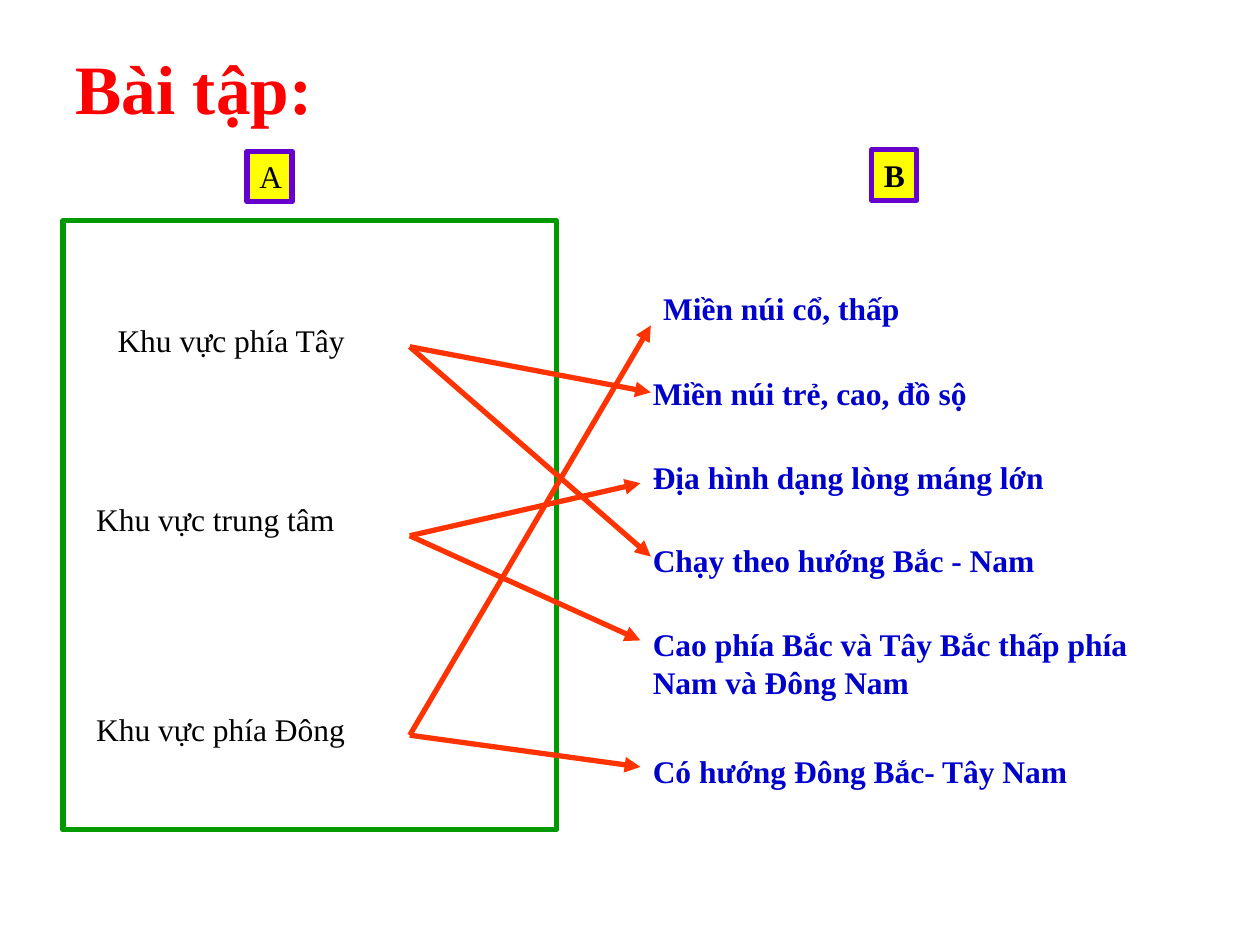
from pptx import Presentation
from pptx.dml.color import RGBColor
from pptx.enum.shapes import MSO_CONNECTOR, MSO_SHAPE
from pptx.enum.text import MSO_ANCHOR, MSO_AUTO_SIZE, PP_ALIGN
from pptx.oxml.ns import qn
from pptx.util import Cm, Pt
from lxml import etree

RECT = MSO_SHAPE.RECTANGLE
LINE = MSO_CONNECTOR.STRAIGHT
LEFT = PP_ALIGN.LEFT
MIDDLE = MSO_ANCHOR.MIDDLE
TOP = MSO_ANCHOR.TOP
GROW = MSO_AUTO_SIZE.SHAPE_TO_FIT_TEXT
FIXED = MSO_AUTO_SIZE.NONE


def color(code):
    return RGBColor.from_string(code)


class Board:
    face = "Times New Roman"
    size = 18
    black = "000000"
    red = "FF0000"
    blue = "0000CC"
    green = "009900"
    purple = "6600CC"
    yellow = "FFFF00"
    orange = "FF3300"
    weight = Pt(3)

    def __init__(self, slide):
        self.slide = slide

    def letter(self, frame, text, ink, bold=False, size=size):
        frame.text = text
        para = frame.paragraphs[0]
        para.alignment = LEFT
        font = para.font
        font.name = self.face
        font.size = Pt(size)
        font.bold = bold
        font.color.rgb = color(ink)

    def title(self, text, x, y, w, h):
        shape = self.slide.shapes.title
        shape.left, shape.top, shape.width, shape.height = Cm(x), Cm(y), Cm(w), Cm(h)
        frame = shape.text_frame
        self.letter(frame, text, self.red, True, 39.6)
        frame.vertical_anchor = MIDDLE
        frame.auto_size = FIXED

    def label(self, text, x, y, w, h=1.02, ink=black, bold=False):
        box = self.slide.shapes.add_textbox(Cm(x), Cm(y), Cm(w), Cm(h))
        frame = box.text_frame
        self.letter(frame, text, ink, bold)
        frame.word_wrap = True
        frame.auto_size = GROW

    def box(self, x, y, w, h, edge, fill=None):
        shape = self.slide.shapes.add_shape(RECT, Cm(x), Cm(y), Cm(w), Cm(h))
        shape.shadow.inherit = False
        shape.line.color.rgb = color(edge)
        shape.line.width = self.weight
        if fill:
            shape.fill.solid()
            shape.fill.fore_color.rgb = color(fill)
        else:
            shape.fill.background()
        return shape

    def badge(self, text, x, y, bold):
        frame = self.box(x, y, 0.91, 1.02, self.purple, self.yellow).text_frame
        self.letter(frame, text, self.black, bold)
        frame.word_wrap = False
        frame.vertical_anchor = TOP
        frame.auto_size = GROW

    def arrow(self, x1, y1, x2, y2):
        link = self.slide.shapes.add_connector(LINE, Cm(x1), Cm(y1), Cm(x2), Cm(y2))
        link.line.color.rgb = color(self.orange)
        link.line.width = self.weight
        props = link._element.spPr
        etree.SubElement(props.find(qn("a:ln")), qn("a:tailEnd"), type="triangle")
        etree.SubElement(props, qn("a:effectLst"))


def main():
    deck = Presentation()
    deck.slide_width, deck.slide_height = Cm(25.4), Cm(19.05)
    board = Board(deck.slides.add_slide(deck.slide_layouts[5]))
    board.title("Bài tập:", 1.27, 0.76, 12.5, 1.96)

    regions = [
        ("Khu vực phía Tây", 2.12, 6.35, 9.74),
        ("Khu vực trung tâm", 1.69, 9.95, 7.41),
        ("Khu vực phía Đông", 1.69, 14.18, 8.47),
    ]
    for region in regions:
        board.label(*region)

    left, top, step = 12.91, 7.41, 1.69
    traits = [
        ("Miền núi cổ, thấp", 13.12, 5.71, 9.14, 1.02),
        ("Miền núi trẻ, cao, đồ sộ", left, top, 9.74, 1.02),
        ("Địa hình dạng lòng máng lớn", left, top + step, 11.22, 1.02),
        ("Chạy theo hướng Bắc - Nam", left, top + 2 * step, 11, 1.02),
        ("Cao phía Bắc và Tây Bắc thấp phía Nam và Đông Nam",
         left, top + 3 * step, 11, 1.79),
        ("Có hướng Đông Bắc- Tây Nam", left, 15.03, 12.07, 1.02),
    ]
    for trait in traits:
        board.label(*trait, ink=board.blue, bold=True)

    board.badge("A", 4.98, 3.05, False)
    board.badge("B", 17.57, 3.02, True)
    board.box(1.27, 4.45, 9.95, 12.28, board.green)

    near, far = 12.91, 13.12
    pairs = [
        (6.99, [(far, 7.91), (far, 11.22)]),
        (10.8, [(near, 9.74), (near, 12.91)]),
        (14.82, [(far, 6.56), (near, 15.46)]),
    ]
    for start, ends in pairs:
        for x, y in ends:
            board.arrow(8.26, start, x, y)

    deck.save("out.pptx")


if __name__ == "__main__":
    main()
